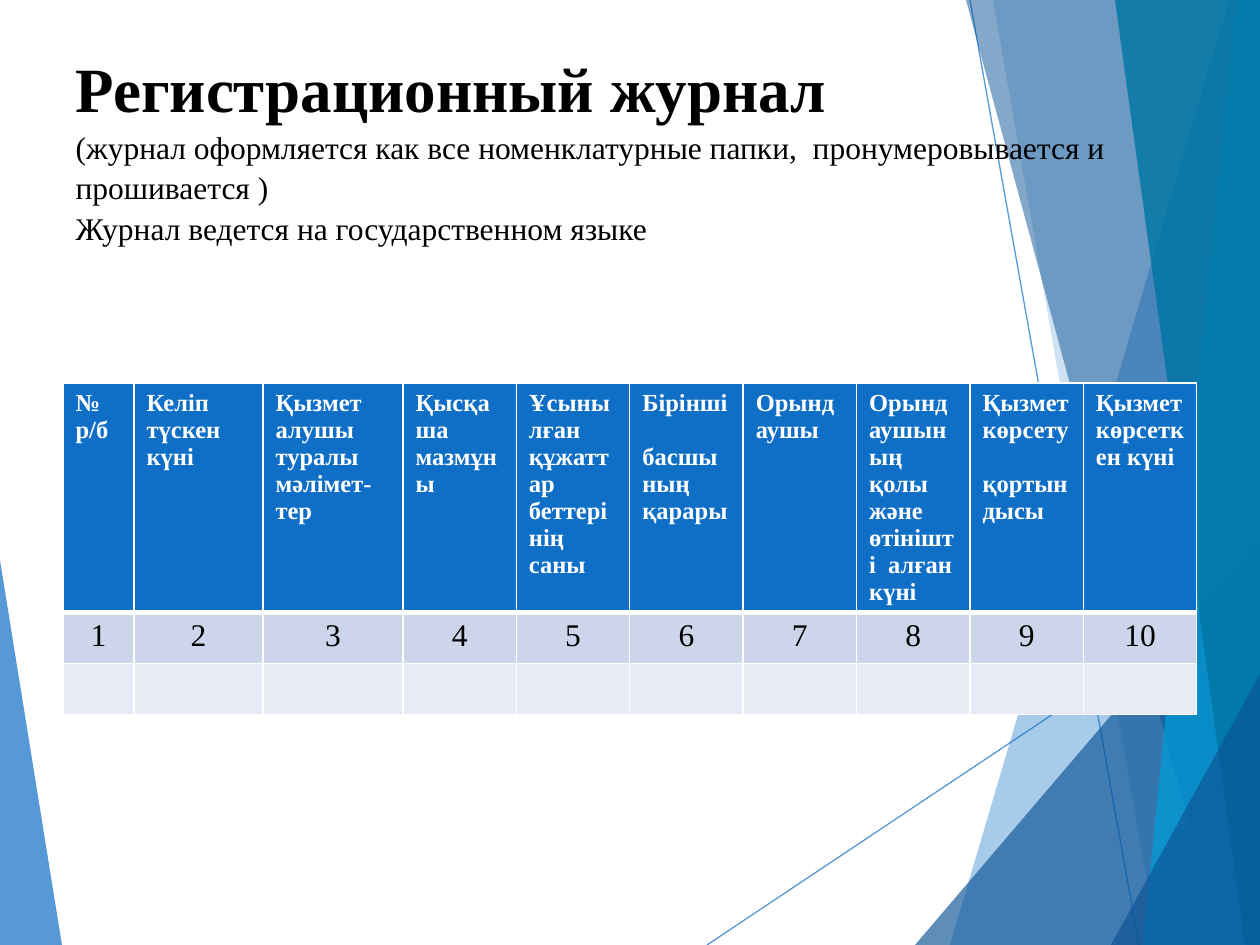
from lxml.etree import SubElement
from pptx import Presentation
from pptx.dml.color import RGBColor
from pptx.enum.shapes import MSO_CONNECTOR
from pptx.enum.text import MSO_ANCHOR, MSO_AUTO_SIZE, PP_ALIGN
from pptx.oxml import parse_xml
from pptx.oxml.ns import nsdecls, qn
from pptx.util import Pt

EMU_PER_PX = 914400 / 126
WIDTH, HEIGHT = 1260, 945
FONT = "Times New Roman"

BLUE = RGBColor(0x0F, 0x6F, 0xC6)
NAVY = RGBColor(0x0B, 0x53, 0x94)
CYAN = RGBColor(0x00, 0x9D, 0xD9)
TEAL = RGBColor(0x00, 0x76, 0xA3)
WHITE = RGBColor(0xFF, 0xFF, 0xFF)
BLACK = RGBColor(0x00, 0x00, 0x00)
NUMBER_FILL = RGBColor(0xCC, 0xD5, 0xEA)
EMPTY_FILL = RGBColor(0xE7, 0xEB, 0xF5)

LEFT_FACET = (BLUE, 70, [(0, 560), (62, HEIGHT), (0, HEIGHT)])
RAYS = [((707, HEIGHT), (WIDTH, 576)), ((970, 0), (1139, HEIGHT))]
RIGHT_FACETS = [
    (BLUE, 36, [(1229, 0), (950, HEIGHT), (WIDTH, HEIGHT), (WIDTH, 0)]),
    (BLUE, 20, [(993, 0), (1158, HEIGHT), (WIDTH, HEIGHT), (WIDTH, 0)]),
    (NAVY, 66, [(915, HEIGHT), (WIDTH, 541), (WIDTH, HEIGHT)]),
    (NAVY, 50, [(966, 0), (1222, HEIGHT), (WIDTH, HEIGHT), (WIDTH, 0)]),
    (CYAN, 70, [(1236, 0), (1143, HEIGHT), (WIDTH, HEIGHT), (WIDTH, 0)]),
    (TEAL, 82, [(1115, 0), (1245, HEIGHT), (WIDTH, HEIGHT), (WIDTH, 0)]),
    (NAVY, 66, [(1111, HEIGHT), (WIDTH, 674), (WIDTH, HEIGHT)]),
]

TITLE_BOX = (63, 38, 1134, 306)
TITLE_LINES = [
    ("Регистрационный журнал", 36, True),
    ("(журнал оформляется как все номенклатурные папки,  пронумеровывается и прошивается ) ", 18, False),
    ("Журнал ведется на государственном языке", 18, False),
]

TABLE_LEFT, TABLE_TOP, TABLE_WIDTH = 63, 383, 1134
FIRST_COLUMNS = [71, 129, 140]
ROW_HEIGHTS = [229, 51, 51]
HEADERS = [
    ["№", "р/б"],
    ["Келіп түскен күні"],
    ["Қызмет алушы туралы мәлімет-", "тер"],
    ["Қысқаша мазмұны"],
    ["Ұсынылған  құжаттар беттерінің саны"],
    ["Бірінші  басшының қарары"],
    ["Орындаушы"],
    ["Орындаушының қолы және өтінішті  алған күні"],
    ["Қызмет көрсету  қортындысы"],
    ["Қызмет көрсеткен күні"],
]


def px(value):
    return round(value * EMU_PER_PX)


def set_opacity(fill, percent):
    color = next(fill.iter(qn("a:srgbClr")))
    SubElement(color, qn("a:alpha")).set("val", str(percent * 1000))


def add_facet(slide, color, opacity, points):
    builder = slide.shapes.build_freeform(*points[0], scale=EMU_PER_PX)
    builder.add_line_segments(points[1:], close=True)
    shape = builder.convert_to_shape()
    shape.shadow.inherit = False
    shape.fill.solid()
    shape.fill.fore_color.rgb = color
    set_opacity(shape.element.spPr.find(qn("a:solidFill")), opacity)
    shape.line.fill.background()


def add_ray(slide, start, end):
    ray = slide.shapes.add_connector(MSO_CONNECTOR.STRAIGHT, *map(px, start + end))
    ray.line.color.rgb = BLUE
    ray.line.width = Pt(0.75)
    set_opacity(ray.element.spPr.find(qn("a:ln")), 70)
    SubElement(ray.element.spPr, qn("a:effectLst"))


def add_run(paragraph, text, size, color, bold):
    run = paragraph.add_run()
    run.text = text
    run.font.name = FONT
    run.font.size = Pt(size)
    run.font.bold = bold
    run.font.color.rgb = color


def format_title(title):
    title.left, title.top, title.width, title.height = map(px, TITLE_BOX)
    frame = title.text_frame
    frame.word_wrap = True
    frame.auto_size = MSO_AUTO_SIZE.NONE
    frame.vertical_anchor = MSO_ANCHOR.TOP
    paragraph = frame.paragraphs[0]
    paragraph.alignment = PP_ALIGN.LEFT
    paragraph.line_spacing = 1.07
    for index, (text, size, bold) in enumerate(TITLE_LINES):
        if index:
            paragraph.add_line_break()
        add_run(paragraph, text, size, BLACK, bold)
    title.element.getparent().append(title.element)


def format_cell(cell, fill, top=1, bottom=1):
    cell.fill.solid()
    cell.fill.fore_color.rgb = fill
    properties = cell._tc.get_or_add_tcPr()
    borders = [("lnL", 1), ("lnR", 1), ("lnT", top), ("lnB", bottom)]
    for position, (tag, width) in enumerate(borders):
        properties.insert(position, parse_xml(
            f'<a:{tag} {nsdecls("a")} w="{Pt(width)}"><a:solidFill>'
            f'<a:srgbClr val="{WHITE}"/></a:solidFill></a:{tag}>'))


def add_journal_table(slide):
    count = len(HEADERS)
    equal_width = (TABLE_WIDTH - sum(FIRST_COLUMNS)) / (count - len(FIRST_COLUMNS))
    widths = FIRST_COLUMNS + [equal_width] * (count - len(FIRST_COLUMNS))
    table = slide.shapes.add_table(
        len(ROW_HEIGHTS), count, px(TABLE_LEFT), px(TABLE_TOP),
        px(TABLE_WIDTH), px(sum(ROW_HEIGHTS))).table
    for row, height in zip(table.rows, ROW_HEIGHTS):
        row.height = px(height)
    for index, (width, lines) in enumerate(zip(widths, HEADERS)):
        table.columns[index].width = px(width)
        header, number, empty = (table.cell(row, index) for row in range(3))
        format_cell(header, BLUE, bottom=3)
        format_cell(number, NUMBER_FILL, top=3)
        format_cell(empty, EMPTY_FILL)
        frame = header.text_frame
        for line_index, line in enumerate(lines):
            paragraph = frame.add_paragraph() if line_index else frame.paragraphs[0]
            add_run(paragraph, line, 14, WHITE, True)
        paragraph = number.text_frame.paragraphs[0]
        paragraph.alignment = PP_ALIGN.CENTER
        add_run(paragraph, str(index + 1), 18, BLACK, False)


def main():
    presentation = Presentation()
    presentation.slide_width, presentation.slide_height = px(WIDTH), px(HEIGHT)
    slide = presentation.slides.add_slide(presentation.slide_layouts[5])
    add_facet(slide, *LEFT_FACET)
    for start, end in RAYS:
        add_ray(slide, start, end)
    for facet in RIGHT_FACETS:
        add_facet(slide, *facet)
    format_title(slide.shapes.title)
    add_journal_table(slide)
    presentation.save("out.pptx")


if __name__ == "__main__":
    main()
